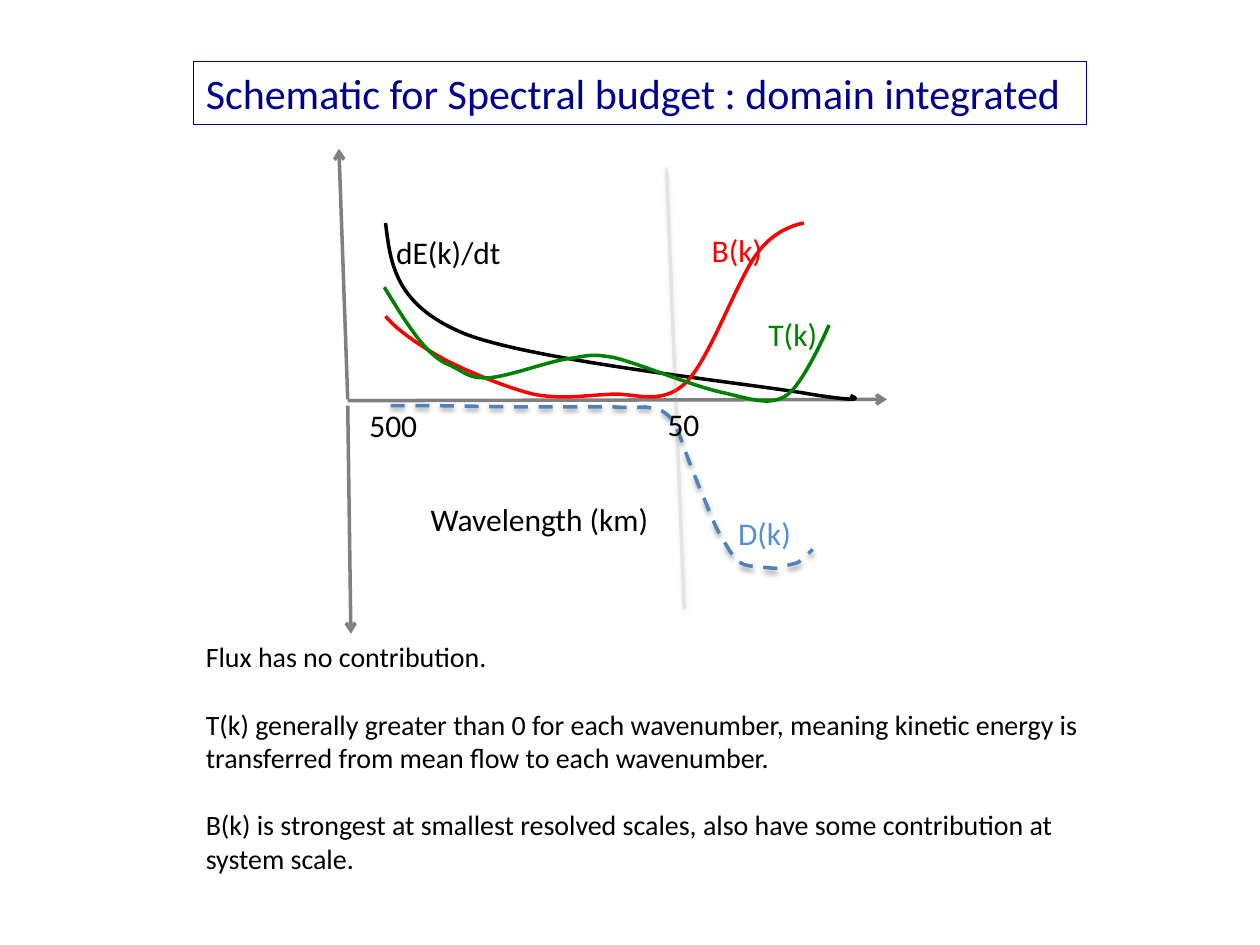
import dataclasses

import lxml.etree
import pptx
import pptx.dml.color
import pptx.enum.dml
import pptx.enum.shapes
import pptx.enum.text
import pptx.oxml.ns
import pptx.util


@dataclasses.dataclass(frozen=True)
class Theme:
    font: str = "Calibri"
    title_size: int = 24
    label_size: int = 18
    body_size: int = 16
    paragraph_gap: float = 19.2
    stroke: float = 2
    navy: str = "000090"
    black: str = "000000"
    red: str = "FF0000"
    green: str = "008000"
    blue: str = "4F81BD"
    light_blue: str = "558ED5"
    axis: str = "808080"
    divider: str = "A6A6A6"


@dataclasses.dataclass(frozen=True)
class Box:
    """A region measured in grid cells; inner places count from its corner."""
    col: float
    row: float
    cols: float
    rows: float

    def inner(self, col, row, cols=0, rows=0):
        return Box(self.col + col, self.row + row, cols, rows)

    def point(self, col, row):
        return cell(self.col + col), cell(self.row + row)

    def emu(self):
        return [cell(v) for v in (self.col, self.row, self.cols, self.rows)]


THEME = Theme()
COLS, ROWS = 100, 75


def cell(n):
    """Length of n grid cells, a hundredth of the slide width each."""
    return pptx.util.Emu(round(pptx.util.Inches(10) * n / COLS))


def rgb(value):
    return pptx.dml.color.RGBColor.from_string(value)


def child(parent, tag, **attrs):
    el = lxml.etree.SubElement(parent, pptx.oxml.ns.qn(tag))
    for key, value in attrs.items():
        el.set(key, str(value))
    return el


def style_line(sp, color, shadow=False):
    sp.line.color.rgb = rgb(color)
    sp.line.width = pptx.util.Pt(THEME.stroke)
    effects = child(sp._element.spPr, "a:effectLst")
    if shadow:
        outer = child(effects, "a:outerShdw", blurRad=pptx.util.Pt(3.1),
                      dist=pptx.util.Pt(1.6), dir=90 * 60000, rotWithShape=0)
        black = child(outer, "a:srgbClr", val=THEME.black)
        child(black, "a:alpha", val=38000)


def add_text(shapes, box, paragraphs, size, color, wrap=False, gap=0):
    sp = shapes.add_textbox(*box.emu())
    tf = sp.text_frame
    tf.word_wrap = wrap
    tf.auto_size = pptx.enum.text.MSO_AUTO_SIZE.SHAPE_TO_FIT_TEXT
    for i, text in enumerate(paragraphs):
        p = tf.add_paragraph() if i else tf.paragraphs[0]
        if i:
            p.space_before = pptx.util.Pt(gap)
        r = p.add_run()
        r.text = text
        r.font.name = THEME.font
        r.font.size = pptx.util.Pt(size)
        r.font.color.rgb = rgb(color)
    return sp


def add_line(shapes, box, start, end, color, shadow=False):
    sp = shapes.add_connector(pptx.enum.shapes.MSO_CONNECTOR.STRAIGHT,
                              *box.point(*start), *box.point(*end))
    style_line(sp, color, shadow)
    return sp


def add_axis(shapes, box, start, end, color=THEME.axis):
    sp = add_line(shapes, box, start, end, color)
    child(sp.line._get_or_add_ln(), "a:tailEnd", type="arrow")


def add_curve(shapes, box, size, start, segments, color, dashed=False, shadow=False):
    """Segments hold one end point, or two control points and an end point."""
    groups = [list(zip(seg[::2], seg[1::2])) for seg in segments]
    builder = shapes.build_freeform(*box.point(*start))
    builder.add_line_segments([box.point(*pt) for g in groups for pt in g], close=False)
    sp = builder.convert_to_shape()

    # Join each group of three steps into one cubic curve
    path = next(sp._element.iter(pptx.oxml.ns.qn("a:path")))
    steps = iter(path.findall(pptx.oxml.ns.qn("a:lnTo")))
    for group in groups:
        members = [next(steps) for _ in group]
        if len(members) == 3:
            cubic = child(path, "a:cubicBezTo")
            for step in members:
                cubic.append(step[0])
                path.remove(step)
        else:
            path.append(members[0])

    # Fit the frame to the drawn curve, not to its control points
    sp.width, sp.height = (cell(n) for n in size)
    path.set("w", str(sp.width))
    path.set("h", str(sp.height))
    sp.fill.background()
    style_line(sp, color, shadow)
    if dashed:
        sp.line.dash_style = pptx.enum.dml.MSO_LINE.DASH


def add_title(s, box):
    sp = add_text(s.shapes, box, ["Schematic for Spectral budget : domain integrated"],
                  THEME.title_size, THEME.navy)
    sp.line.color.rgb = rgb(THEME.navy)
    sp.line.width = pptx.util.Pt(0.75)


def add_diagram(s, box):
    shapes = s.shapes.add_group_shape().shapes

    def label(text, col, row, cols, color=THEME.black):
        add_text(shapes, box.inner(col, row, cols, 4), [text], THEME.label_size, color)

    # Wavelength axis and upper axis
    add_axis(shapes, box, (2.6, 21.8), (45.4, 21.7), "7F7F7F")
    add_axis(shapes, box, (2.6, 21.7), (1.9, 1.8))
    label("Wavelength (km)", 8.2, 29.2, 19.7)

    # Energy tendency, dE(k)/dt
    add_curve(shapes, box, (37.2, 14), (5.6, 7.7), [
        (6, 10.9, 6.3, 14.2, 11.9, 16.5),
        (17.6, 18.7, 34.3, 20.4, 39.4, 21.3),
        (44.5, 22.1, 42.5, 21.4, 42.5, 21.4)], THEME.black)

    # B(k)
    add_curve(shapes, box, (33.2, 13.8), (5.6, 15.1), [
        (6.5, 16.2, 8.4, 17.5, 10.4, 18.6),
        (12.4, 19.6, 15.3, 20.8, 17.4, 21.3),
        (19.6, 21.7, 21.3, 21.4, 23.3, 21.3),
        (25.3, 21.1, 27.4, 22.3, 29.4, 20.4),
        (31.3, 18.6, 33.5, 12.2, 35.1, 10.1),
        (36.6, 8, 38.8, 7.7, 38.8, 7.7)], THEME.red)

    # T(k)
    add_curve(shapes, box, (35.3, 9), (5.5, 12.8), [
        (6.7, 14.7, 8.5, 17.9, 10.3, 18.8),
        (12.1, 19.6, 12, 20, 13.7, 20),
        (15.3, 19.9, 18.2, 18.8, 19.9, 18.5),
        (21.6, 18.3, 21.7, 18, 23.8, 18.4),
        (25.8, 18.9, 29.9, 20.6, 32.1, 21.1),
        (34.4, 21.6, 36, 22.3, 37.4, 21.4),
        (38.8, 20.5, 40.8, 15.8, 40.8, 15.8)], THEME.green)

    # D(k)
    add_curve(shapes, box, (33.5, 12.9), (6, 22.2), [
        (10.1, 22.2), (16.2, 22.3), (23.8, 22.3),
        (25.4, 22.4, 25.6, 22.3, 26.2, 22.3),
        (26.8, 22.4, 27.1, 22.4, 27.5, 22.6),
        (27.8, 22.8, 28.1, 22.9, 28.5, 23.6),
        (28.9, 24.3, 29.4, 25.9, 29.8, 26.9),
        (30.2, 27.9, 30.5, 28.7, 30.9, 29.6),
        (31.3, 30.6, 31.8, 31.9, 32.3, 32.7),
        (32.8, 33.5, 33.2, 34.3, 33.7, 34.6),
        (34.2, 35, 34.8, 34.9, 35.2, 35),
        (35.7, 35, 36.2, 35.1, 36.5, 35.1),
        (36.8, 35.1, 36.6, 35.1, 36.9, 35),
        (37.2, 34.9, 38, 34.8, 38.4, 34.6),
        (38.8, 34.3, 39.5, 33.6, 39.5, 33.6)], THEME.blue, dashed=True, shadow=True)

    # Lower axis and curve labels
    add_axis(shapes, box, (2.6, 22.2), (2.85, 40.3))
    label("B(k)", 30.5, 7.85, 6.1, THEME.red)
    label("T(k)", 35, 14.5, 5.9, THEME.green)
    label("D(k)", 32.6, 30.3, 6.3, THEME.light_blue)
    label("dE(k)/dt", 5.45, 8, 10.4)

    # Faint divider at 50 km, with the scale labels
    divider = add_line(shapes, box, (27.9, 3.3), (29.3, 38.3), THEME.divider, shadow=True)
    for color in divider.line._get_or_add_ln().iter(pptx.oxml.ns.qn("a:srgbClr")):
        child(color, "a:alpha", val=21000)
    label("50", 27, 21.65, 4.6)
    label("500", 3.33, 21.75, 5.9)


def add_findings(s, box):
    add_text(s.shapes, box, [
        "Flux has no contribution.",
        "T(k) generally greater than 0 for each wavenumber, meaning kinetic energy is "
        "transferred from mean flow to each wavenumber.",
        "B(k) is strongest at smallest resolved scales, also have some contribution at "
        "system scale.",
    ], THEME.body_size, THEME.black, wrap=True, gap=THEME.paragraph_gap)


def main():
    prs = pptx.Presentation()
    prs.slide_width, prs.slide_height = cell(COLS), cell(ROWS)
    s = prs.slides.add_slide(prs.slide_layouts[6])
    add_diagram(s, Box(25, 10, 46, 41))
    add_findings(s, Box(15.35, 50.3, 75, 19.9))
    add_title(s, Box(15.35, 4.9, 70.9, 5))
    prs.save("out.pptx")


if __name__ == "__main__":
    main()
